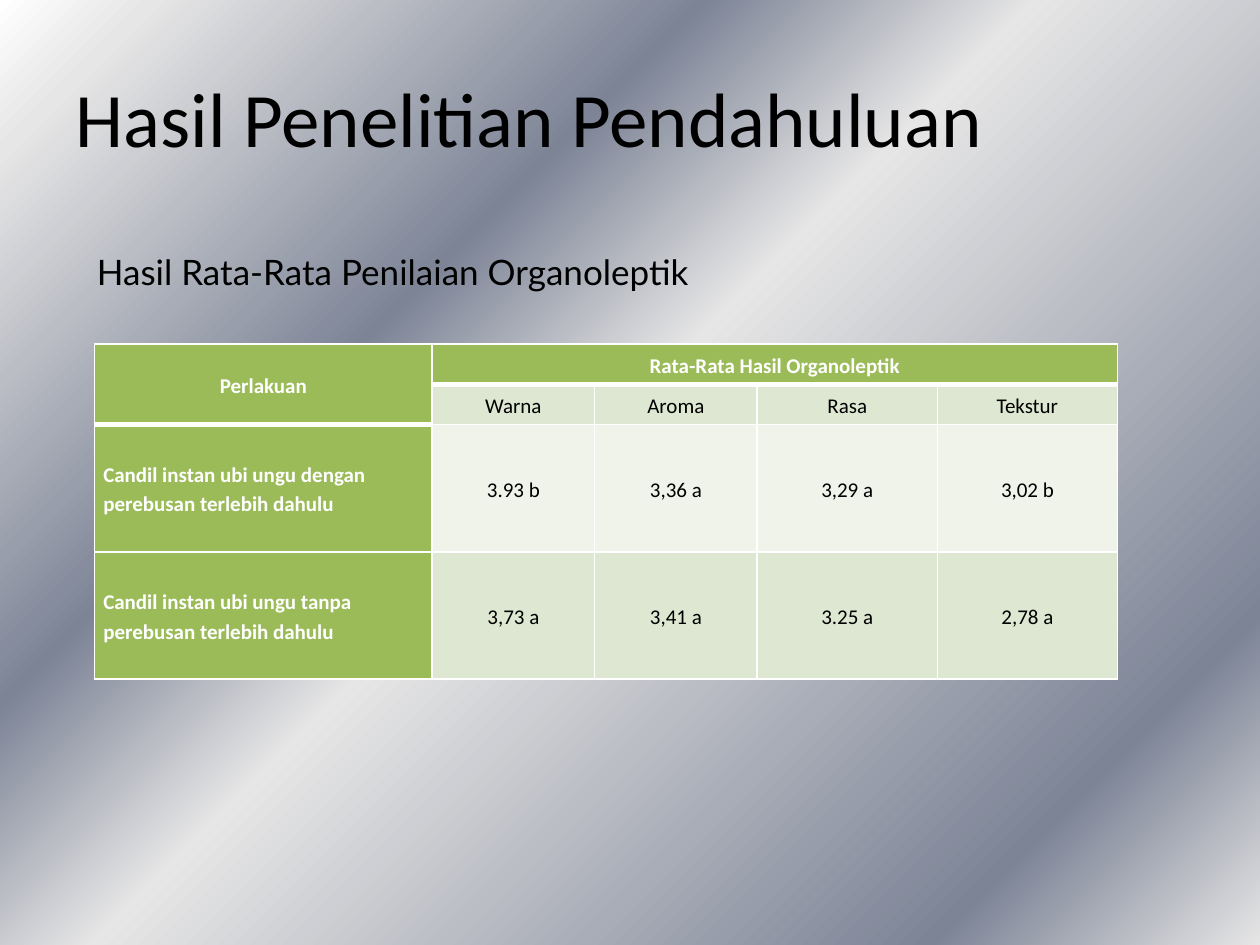
from lxml import etree
from pptx import Presentation
from pptx.dml.color import RGBColor
from pptx.enum.text import MSO_ANCHOR, MSO_AUTO_SIZE, PP_ALIGN
from pptx.oxml.ns import qn
from pptx.util import Inches, Pt

LEFT, CENTER = PP_ALIGN.LEFT, PP_ALIGN.CENTER
MIDDLE = MSO_ANCHOR.MIDDLE
GROW = MSO_AUTO_SIZE.SHAPE_TO_FIT_TEXT
TITLE_ONLY = 5

COLORS = {"text": "000000", "white": "FFFFFF", "head": "9BBB59",
          "dark": "DEE7D1", "light": "EFF3EA"}
STOPS = [(0, "FFFFFF"), (7, "E6E6E6"), (32, "7D8496"),
         (47, "E6E6E6"), (85, "7D8496"), (100, "E6E6E6")]

COLS = [2.68, 1.29, 1.29, 1.43, 1.43]
ROWS = [0.32, 0.32, 1.01, 1.01]
DATA = [
    ["Perlakuan", "Rata-Rata Hasil Organoleptik", "", "", ""],
    ["", "Warna", "Aroma", "Rasa", "Tekstur"],
    ["Candil instan ubi ungu dengan perebusan terlebih dahulu",
     "3.93 b", "3,36 a", "3,29 a", "3,02 b"],
    ["Candil instan ubi ungu tanpa perebusan terlebih dahulu",
     "3,73 a", "3,41 a", "3.25 a", "2,78 a"],
]


def add(parent, tag, **attrs):
    return etree.SubElement(parent, qn(tag), attrs)


class Deck:
    font = "Calibri"

    def __init__(self):
        self.prs = Presentation()
        self.prs.slide_width, self.prs.slide_height = Inches(10), Inches(7.5)
        self.slide = self.prs.slides.add_slide(self.prs.slide_layouts[TITLE_ONLY])

    def style(self, frame, size, color="text", bold=False, align=LEFT, font=None):
        for para in frame.paragraphs:
            para.alignment = align
            for run in para.runs:
                run.font.name = font or self.font
                run.font.size = Pt(size)
                run.font.bold = bold
                run.font.color.rgb = RGBColor.from_string(COLORS[color])

    def backdrop(self, stops):
        fill = self.slide.background.fill
        fill.gradient()
        grad = self.slide.element.find(".//" + qn("a:gradFill"))
        for child in list(grad):
            grad.remove(child)
        group = add(grad, "a:gsLst")
        for pos, color in stops:
            stop = add(group, "a:gs", pos=str(pos * 1000))
            add(stop, "a:srgbClr", val=color)
        shade = add(grad, "a:path", path="circle")
        add(shade, "a:fillToRect", r="100000", b="100000")

    def title(self, text, box):
        shape = self.slide.shapes.title
        shape.left, shape.top, shape.width, shape.height = map(Inches, box)
        shape.text_frame.text = text
        shape.text_frame.vertical_anchor = MIDDLE
        self.style(shape.text_frame, 44)

    def label(self, text, box):
        frame = self.slide.shapes.add_textbox(*map(Inches, box)).text_frame
        frame.word_wrap = True
        frame.auto_size = GROW
        frame.text = text
        self.style(frame, 20, font="Lato")

    def border(self, cell, widths):
        props = cell._tc.get_or_add_tcPr()
        for side, width in widths.items():
            line = add(props, "a:ln" + side, w=str(Pt(width)))
            add(add(line, "a:solidFill"), "a:srgbClr", val=COLORS["white"])

    def cell(self, cell, text, row, col):
        # The heavy rule runs under the header cells
        last = 1 if col == 0 else 0
        head = row == 0 or col == 0
        self.border(cell, {"L": 1, "R": 1,
                           "T": 3 if row == last + 1 else 1,
                           "B": 3 if row <= last else 1})
        shade = "head" if head else "dark" if row % 2 else "light"
        cell.fill.solid()
        cell.fill.fore_color.rgb = RGBColor.from_string(COLORS[shade])
        cell.vertical_anchor = MIDDLE
        cell.margin_left = cell.margin_right = Inches(0.07)
        cell.margin_top = cell.margin_bottom = 0
        if text:
            cell.text_frame.text = text
            cell.text_frame.paragraphs[0].line_spacing = 1.15
            align = LEFT if col == 0 and row > 1 else CENTER
            self.style(cell.text_frame, 12, "white" if head else "text", head, align)

    def table(self, data, left, top):
        size = map(Inches, (left, top, sum(COLS), sum(ROWS)))
        grid = self.slide.shapes.add_table(len(ROWS), len(COLS), *size).table
        for col, width in zip(grid.columns, COLS):
            col.width = Inches(width)
        for row, height in zip(grid.rows, ROWS):
            row.height = Inches(height)
        for r, texts in enumerate(data):
            for c, text in enumerate(texts):
                self.cell(grid.cell(r, c), text, r, c)
        grid.cell(0, 0).merge(grid.cell(1, 0))
        grid.cell(0, 1).merge(grid.cell(0, len(COLS) - 1))


def main():
    deck = Deck()
    # Background and headings
    deck.backdrop(STOPS)
    deck.title("Hasil Penelitian Pendahuluan", (0.5, 0.3, 9, 1.25))
    # Results table
    deck.table(DATA, 0.75, 2.73)
    deck.label("Hasil Rata-Rata Penilaian Organoleptik", (0.67, 1.94, 5.98, 0.44))
    deck.prs.save("out.pptx")


if __name__ == "__main__":
    main()
